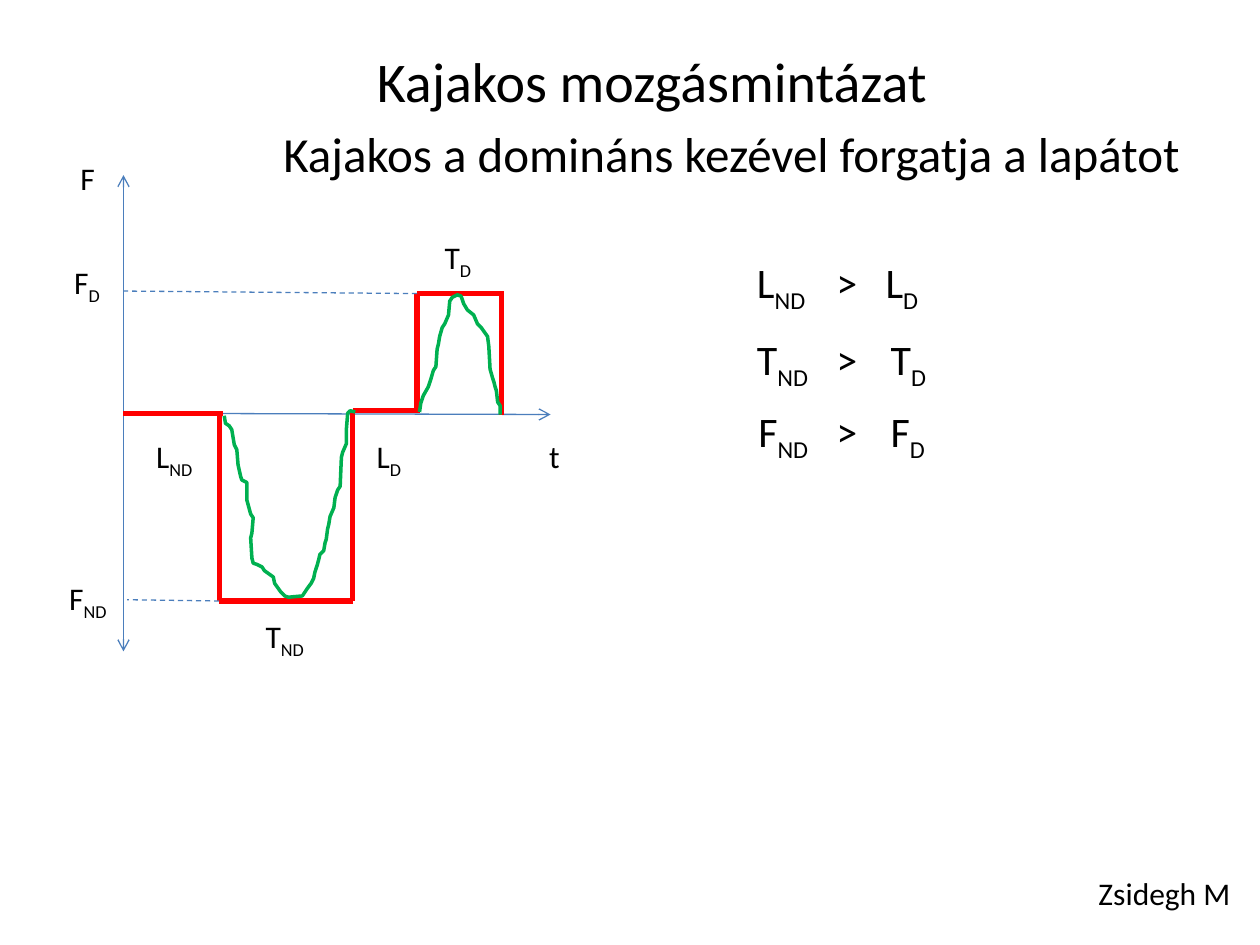
"""Build a slide of the kayaker's force pattern over time."""
from dataclasses import dataclass

from lxml import etree
from pptx import Presentation
from pptx import util as u
from pptx.dml.color import RGBColor
from pptx.enum import dml, shapes, text
from pptx.oxml.ns import qn

FONT = "Calibri"
BLACK, BLUE, RED, GREEN = "000000", "4B7EBC", "FF0000", "00B050"

AXIS_X, AXIS_Y = 0.98, 3.28
PULL_ND = (1.74, 2.8)
PULL_D = (3.31, 3.98)
FORCE_ND, FORCE_D = 4.77, 2.33
REST_D = 3.26


@dataclass
class Label:
    left: float
    top: float
    width: float
    height: float
    size: int
    base: str
    subscript: str = ""


@dataclass
class Line:
    start: tuple[float, float]
    end: tuple[float, float]
    color: str = RED
    width: float = 3
    arrows: tuple[str, ...] = ()
    dashed: bool = False


LINES = [
    Line((AXIS_X, 1.39), (AXIS_X, 5.17), BLUE, 0.75, ("headEnd", "tailEnd")),
    Line((AXIS_X, AXIS_Y), (4.37, 3.29), BLUE, 0.75, ("tailEnd",)),
    Line((AXIS_X, AXIS_Y), (1.77, AXIS_Y)),
    Line((PULL_ND[0], FORCE_ND), (PULL_ND[1], FORCE_ND)),
    Line((PULL_ND[1], REST_D), (PULL_D[0], REST_D)),
    Line((PULL_D[0], FORCE_D), (PULL_D[1], FORCE_D)),
    Line((PULL_ND[0], 3.29), (PULL_ND[0], FORCE_ND)),
    Line((PULL_ND[1], REST_D), (PULL_ND[1], FORCE_ND)),
    Line((PULL_D[0], FORCE_D), (PULL_D[0], AXIS_Y)),
    Line((PULL_D[1], 2.31), (PULL_D[1], 3.29)),
    Line((PULL_D[0], FORCE_D), (AXIS_X, 2.31), BLUE, 0.75, dashed=True),
    Line((PULL_ND[0], FORCE_ND), (1.01, 4.76), BLUE, 0.75, dashed=True),
]

CHART_LABELS = [
    Label(1.14, 3.42, 0.52, 0.4, 18, "L", "ND"),
    Label(2.89, 3.42, 0.41, 0.4, 18, "L", "D"),
    Label(2.01, 4.85, 0.54, 0.4, 18, "T", "ND"),
    Label(3.43, 1.84, 0.43, 0.4, 18, "T", "D"),
    Label(0.49, 2.04, 0.42, 0.4, 18, "F", "D"),
    Label(0.45, 4.55, 0.53, 0.4, 18, "F", "ND"),
    Label(0.54, 1.21, 0.32, 0.4, 18, "F"),
    Label(4.26, 3.42, 0.29, 0.4, 18, "t"),
]
TITLE = Label(2.89, 0.32, 4.61, 0.64, 32, "Kajakos mozgásmintázat")
SUBTITLE = Label(2.15, 0.93, 7.39, 0.57, 28,
                 "Kajakos a domináns kezével forgatja a lapátot")
AUTHOR = Label(8.62, 6.89, 1.26, 0.4, 18, "Zsidegh M")

COMPARISONS = [("L", 1.99, 5.91, 6.93), ("T", 2.6, 5.91, 6.97), ("F", 3.17, 5.92, 6.97)]

FORCE_CURVES = [
    [(1.78, 3.3), (1.79, 3.36), (1.82, 3.38), (1.84, 3.41), (1.86, 3.53), (1.88, 3.57),
     (1.89, 3.69), (1.91, 3.78), (1.92, 3.81), (1.96, 3.83), (1.96, 3.97), (1.99, 4.08),
     (2.01, 4.11), (2, 4.23), (1.99, 4.27), (2, 4.43), (2.01, 4.47), (2.04, 4.48),
     (2.08, 4.5), (2.1, 4.53), (2.17, 4.58), (2.18, 4.63), (2.23, 4.7), (2.26, 4.73),
     (2.29, 4.74), (2.4, 4.73), (2.44, 4.67), (2.47, 4.63), (2.49, 4.59), (2.5, 4.54),
     (2.52, 4.48), (2.53, 4.44), (2.54, 4.4), (2.57, 4.37), (2.58, 4.31), (2.59, 4.28),
     (2.6, 4.2), (2.61, 4.16), (2.62, 4.1), (2.65, 4.03), (2.66, 3.95), (2.68, 3.89),
     (2.7, 3.86), (2.71, 3.63), (2.72, 3.59), (2.75, 3.52), (2.75, 3.4), (2.76, 3.28),
     (2.78, 3.26), (2.82, 3.27)],
    [(3.33, 3.27), (3.34, 3.2), (3.36, 3.14), (3.4, 3.07), (3.42, 3.01), (3.44, 2.94),
     (3.46, 2.91), (3.47, 2.77), (3.48, 2.73), (3.49, 2.67), (3.51, 2.6), (3.53, 2.57),
     (3.56, 2.5), (3.57, 2.39), (3.59, 2.36), (3.63, 2.34), (3.66, 2.35), (3.68, 2.41),
     (3.71, 2.46), (3.76, 2.5), (3.79, 2.57), (3.82, 2.6), (3.87, 2.67), (3.88, 2.75),
     (3.89, 2.93), (3.91, 3), (3.92, 3.03), (3.93, 3.07), (3.94, 3.1), (3.95, 3.19),
     (3.97, 3.22), (3.97, 3.29)],
]


def rgb(color: str) -> RGBColor:
    return RGBColor.from_string(color)


def comparison_labels() -> list[Label]:
    labels = []
    for base, top, left, right in COMPARISONS:
        labels += [
            Label(left, top, 0.64, 0.5, 24, base, "ND"),
            Label(6.54, top, 0.37, 0.5, 24, ">"),
            Label(right, top, 0.49, 0.5, 24, base, "D"),
        ]
    return labels


def fill_label(shape, label: Label) -> None:
    shape.left, shape.top = u.Inches(label.left), u.Inches(label.top)
    shape.width, shape.height = u.Inches(label.width), u.Inches(label.height)
    frame = shape.text_frame
    frame.text = label.base
    frame.word_wrap = False
    frame.auto_size = text.MSO_AUTO_SIZE.SHAPE_TO_FIT_TEXT
    frame.vertical_anchor = text.MSO_ANCHOR.TOP
    paragraph = frame.paragraphs[0]
    paragraph.alignment = text.PP_ALIGN.LEFT
    if label.subscript:
        run = paragraph.add_run()
        run.text = label.subscript
        run._r.get_or_add_rPr().set("baseline", "-25000")
    for run in paragraph.runs:
        run.font.name = FONT
        run.font.size = u.Pt(label.size)
        run.font.color.rgb = rgb(BLACK)


def add_label(slide, label: Label) -> None:
    fill_label(slide.shapes.add_textbox(0, 0, 0, 0), label)


def add_line(slide, line: Line) -> None:
    connector = slide.shapes.add_connector(
        shapes.MSO_CONNECTOR.STRAIGHT,
        *(u.Inches(value) for value in line.start + line.end))
    connector.line.color.rgb = rgb(line.color)
    connector.line.width = u.Pt(line.width)
    if line.dashed:
        connector.line.dash_style = dml.MSO_LINE.DASH
    properties = connector._element.spPr
    for arrow in line.arrows:
        etree.SubElement(properties.find(qn("a:ln")), qn(f"a:{arrow}"), type="arrow")
    etree.SubElement(properties, qn("a:effectLst"))


def add_curve(slide, points: list[tuple[float, float]]) -> None:
    start, *rest = [(u.Inches(x), u.Inches(y)) for x, y in points]
    builder = slide.shapes.build_freeform(*start)
    builder.add_line_segments(rest, close=False)
    shape = builder.convert_to_shape()
    shape.shadow.inherit = False
    shape.fill.background()
    shape.line.color.rgb = rgb(GREEN)
    shape.line.width = u.Pt(2)


def main() -> None:
    presentation = Presentation()
    presentation.slide_width, presentation.slide_height = u.Inches(10), u.Inches(7.5)
    slide = presentation.slides.add_slide(presentation.slide_layouts[5])
    fill_label(slide.shapes.title, TITLE)
    for line in LINES:
        add_line(slide, line)
    for points in FORCE_CURVES:
        add_curve(slide, points)
    for label in [*CHART_LABELS, *comparison_labels(), SUBTITLE, AUTHOR]:
        add_label(slide, label)
    presentation.save("out.pptx")


if __name__ == "__main__":
    main()
